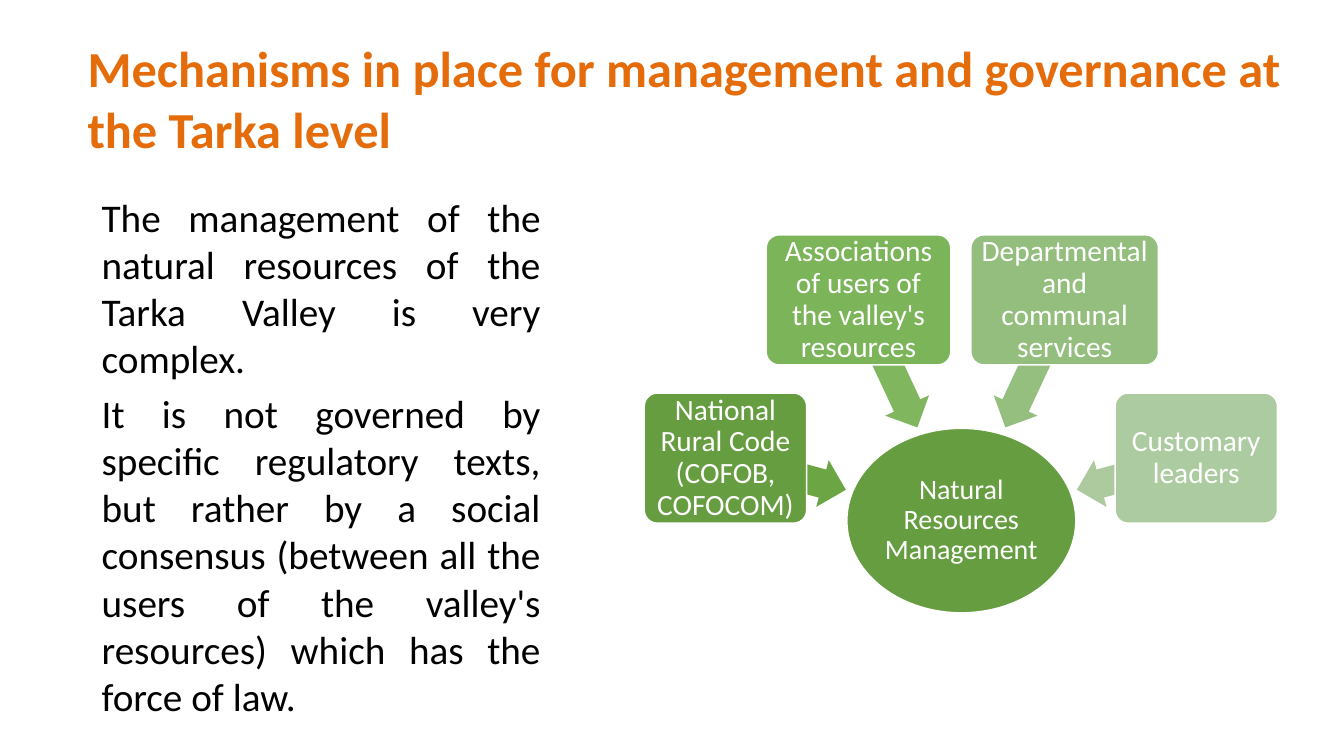
from pptx import Presentation
from pptx.dml.color import RGBColor
from pptx.enum.shapes import MSO_SHAPE
from pptx.enum.text import MSO_ANCHOR, PP_ALIGN
from pptx.util import Inches, Pt

ELLIPSE = MSO_SHAPE.OVAL
CARD = MSO_SHAPE.ROUNDED_RECTANGLE
ARROW = MSO_SHAPE.LEFT_ARROW
TOP, MIDDLE = MSO_ANCHOR.TOP, MSO_ANCHOR.MIDDLE
LEFT, CENTER, JUSTIFY = PP_ALIGN.LEFT, PP_ALIGN.CENTER, PP_ALIGN.JUSTIFY

FONT = "Calibri"
COLORS = {
    "title": "E46C0A",
    "body": "000000",
    "white": "FFFFFF",
    "core": "669D40",
}

TITLE = "Mechanisms in place for management and governance at the Tarka level"
EXPLANATION = [
    "The management of the natural resources of the Tarka Valley is very complex.",
    "It is not governed by specific regulatory texts, but rather by a social "
    "consensus (between all the users of the valley's resources) which has the "
    "force of law.",
]

CARD_HEIGHT = 1.29
ARROW_HEIGHT = 0.48
FIRST_ANGLE, ANGLE_STEP = 195, 50
ACTORS = [
    ("National Rural Code (COFOB, COFOCOM)", (6.39, 3.9, 1.61), "669D40",
     (7.18, 4.46, 1.23), "6BA544"),
    ("Associations of users of the valley's resources", (7.6, 2.33, 1.83), "7BB459",
     (8.11, 3.37, 1.39), "7FB65E"),
    ("Departmental and communal services", (9.63, 2.33, 1.86), "94BE7D",
     (9.57, 3.37, 1.39), "95BF7F"),
    ("Customary leaders", (11.06, 3.9, 1.61), "ADCBA0",
     (10.66, 4.46, 1.23), "ADCA9F"),
]


def write(frame, paragraphs, frame_format, paragraph_format, font_format, color):
    frame.word_wrap = True
    for name, value in frame_format.items():
        setattr(frame, name, value)
    for index, words in enumerate(paragraphs):
        paragraph = frame.add_paragraph() if index else frame.paragraphs[0]
        for name, value in paragraph_format.items():
            setattr(paragraph, name, value)
        run = paragraph.add_run()
        run.text = words
        for name, value in font_format.items():
            setattr(run.font, name, value)
        run.font.name = FONT
        run.font.color.rgb = RGBColor.from_string(color)


def add_text(slide, box, *text_format):
    textbox = slide.shapes.add_textbox(*map(Inches, box))
    write(textbox.text_frame, *text_format)


def add_figure(slide, kind, box, fill, outlined=True):
    figure = slide.shapes.add_shape(kind, *map(Inches, box))
    figure.shadow.inherit = False
    figure.fill.solid()
    figure.fill.fore_color.rgb = RGBColor.from_string(fill)
    if outlined:
        figure.line.color.rgb = RGBColor.from_string(COLORS["white"])
        figure.line.width = Pt(1)
    else:
        figure.line.fill.background()
    return figure


def add_label(figure, words, size, inset):
    sides = ("margin_left", "margin_top", "margin_right", "margin_bottom")
    frame_format = dict.fromkeys(sides, Inches(inset))
    frame_format["vertical_anchor"] = MIDDLE
    write(figure.text_frame, [words], frame_format,
          {"alignment": CENTER, "line_spacing": 0.9},
          {"size": Pt(size)}, COLORS["white"])


def add_arrow(slide, place, angle, fill):
    arrow = add_figure(slide, ARROW, (*place, ARROW_HEIGHT), fill, outlined=False)
    arrow.adjustments[0] = 0.6
    arrow.adjustments[1] = 0.5
    arrow.rotation = angle


def add_actor(slide, words, place, fill):
    card = add_figure(slide, CARD, (*place, CARD_HEIGHT), fill)
    card.adjustments[0] = 0.1
    add_label(card, words, 21, 0.04)


def main():
    presentation = Presentation()
    presentation.slide_width = Inches(13.33)
    presentation.slide_height = Inches(7.5)
    slide = presentation.slides.add_slide(presentation.slide_layouts[6])

    add_text(slide, (0.77, -0.16, 12.3, 1.67), [TITLE],
             {"vertical_anchor": TOP, "margin_top": Inches(0.53)},
             {"alignment": LEFT}, {"size": Pt(36), "bold": True}, COLORS["title"])
    add_text(slide, (0.91, 1.87, 4.55, 5.42), EXPLANATION,
             {"vertical_anchor": TOP},
             {"alignment": JUSTIFY, "space_before": Pt(5.6)},
             {"size": Pt(28)}, COLORS["body"])

    core = add_figure(slide, ELLIPSE, (8.4, 4.25, 2.27, 1.83), COLORS["core"])
    add_label(core, "Natural Resources Management", 20, 0.01)
    for index, (words, card_place, card_fill, arrow_place, arrow_fill) in enumerate(ACTORS):
        add_arrow(slide, arrow_place, FIRST_ANGLE + ANGLE_STEP * index, arrow_fill)
        add_actor(slide, words, card_place, card_fill)

    presentation.save("out.pptx")


if __name__ == "__main__":
    main()
